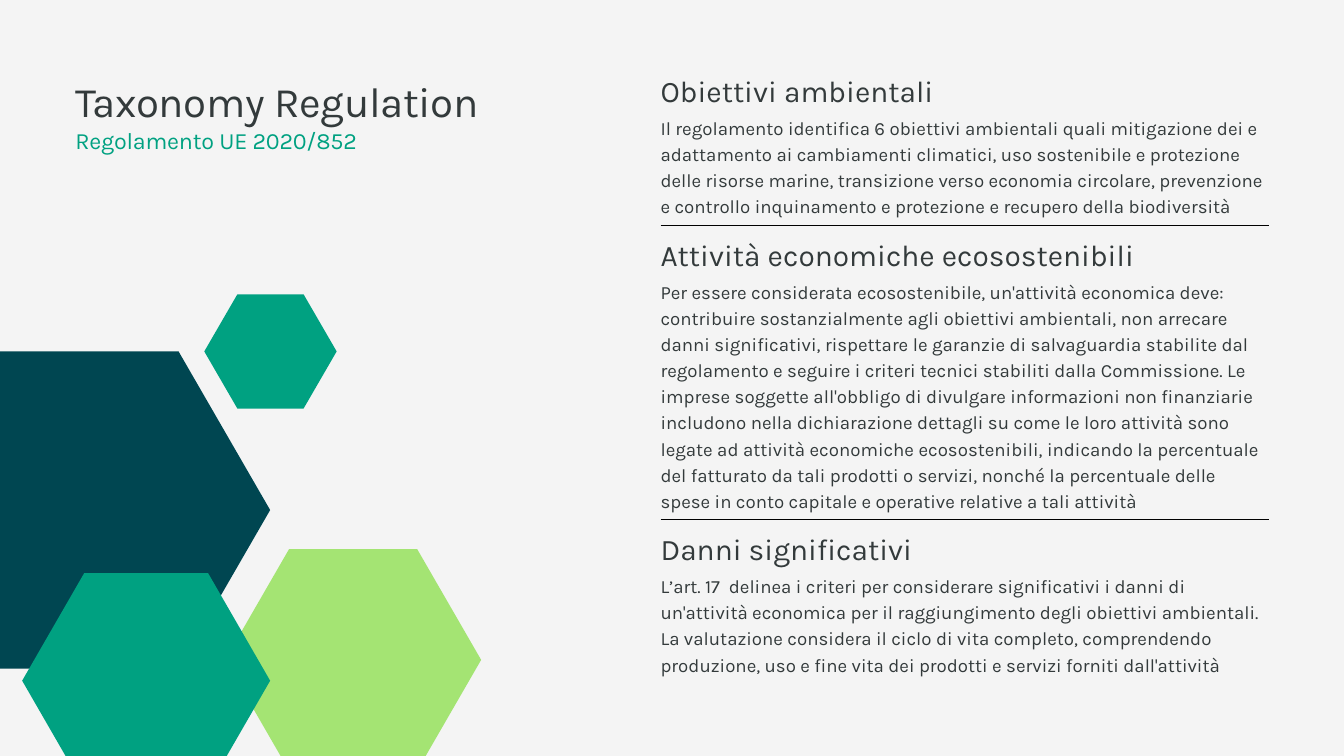
"""Build the Taxonomy Regulation slide: hexagon cluster on the left, three ruled sections on the right."""
from lxml.etree import SubElement
from pptx import Presentation
from pptx.dml.color import RGBColor
from pptx.enum.shapes import MSO_CONNECTOR as Connector
from pptx.enum.text import MSO_ANCHOR as Anchor, MSO_AUTO_SIZE as AutoSize, PP_ALIGN as Align
from pptx.oxml.ns import qn
from pptx.util import Inches, Pt

PAPER = RGBColor(0xF4, 0xF4, 0xF4)
INK = RGBColor(0x33, 0x3A, 0x3B)
BLACK = RGBColor(0, 0, 0)
GREEN = RGBColor(0x00, 0xA1, 0x81)
PETROL = RGBColor(0x00, 0x46, 0x51)
LIME = RGBColor(0xA4, 0xE4, 0x73)
FONT = "Karla"

TITLE = "Taxonomy Regulation"
SUBTITLE = "Regolamento UE 2020/852"

# (left, top, width, height, colour)
HEXAGONS = [
    (-1.43, 5.23, 5.45, 4.72, PETROL),
    (3.35, 8.17, 3.81, 3.3, LIME),
    (3.04, 4.38, 1.97, 1.7, GREEN),
    (0.33, 8.53, 3.69, 3.2, GREEN),
]

# (top, body height, heading, body)
SECTIONS = [
    (1.08, 1.55, "Obiettivi ambientali",
     "Il regolamento identifica 6 obiettivi ambientali quali mitigazione dei e adattamento ai "
     "cambiamenti climatici, uso sostenibile e protezione delle risorse marine, transizione verso "
     "economia circolare, prevenzione e controllo inquinamento e protezione e recupero della "
     "biodiversità"),
    (3.52, 3.45, "Attività economiche ecosostenibili",
     "Per essere considerata ecosostenibile, un'attività economica deve: contribuire "
     "sostanzialmente agli obiettivi ambientali, non arrecare danni significativi, rispettare le "
     "garanzie di salvaguardia stabilite dal regolamento e seguire i criteri tecnici stabiliti "
     "dalla Commissione. Le imprese soggette all'obbligo di divulgare informazioni non finanziarie "
     "includono nella dichiarazione dettagli su come le loro attività sono legate ad attività "
     "economiche ecosostenibili, indicando la percentuale del fatturato da tali prodotti o servizi, "
     "nonché la percentuale delle spese in conto capitale e operative relative a tali attività"),
    (7.9, 1.54, "Danni significativi",
     "L’art. 17  delinea i criteri per considerare significativi i danni di un'attività economica "
     "per il raggiungimento degli obiettivi ambientali. La valutazione considera il ciclo di vita "
     "completo, comprendendo produzione, uso e fine vita dei prodotti e servizi forniti "
     "dall'attività"),
]
COLUMN_LEFT, COLUMN_WIDTH = 9.83, 9.05
HEADING_HEIGHT, BODY_OFFSET, RULE_GAP = 0.54, 0.6, 0.17


def place(box, left, top, width, height):
    box.left, box.top, box.width, box.height = map(Inches, (left, top, width, height))
    frame = box.text_frame
    frame.word_wrap = True
    frame.auto_size = AutoSize.NONE
    frame.vertical_anchor = Anchor.TOP
    frame.margin_left = frame.margin_right = frame.margin_top = frame.margin_bottom = 0
    return frame


def write(para, text, *, size, leading, color=INK, tracking=0):
    para.alignment = Align.LEFT
    para.line_spacing = Pt(leading)
    para.space_before = para.space_after = Pt(0)
    span = para.add_run()
    span.text = text
    span.font.name = FONT
    span.font.size = Pt(size)
    span.font.color.rgb = color
    if tracking:
        span._r.get_or_add_rPr().set("spc", str(round(tracking * 100)))


def add_title(page):
    frame = place(page.shapes.title, 1.12, 1.12, 7.82, 1.16)
    write(frame.paragraphs[0], TITLE, size=45, leading=54, tracking=-0.4)
    write(frame.add_paragraph(), SUBTITLE, size=25, leading=30, color=GREEN, tracking=-0.2)


def add_hexagon(page, left, top, width, height, color):
    corners = [(0, 0.5), (0.25, 0), (0.75, 0), (1, 0.5), (0.75, 1), (0.25, 1)]
    points = [(Inches(left + x * width), Inches(top + y * height)) for x, y in corners]
    builder = page.shapes.build_freeform(*points[0])
    builder.add_line_segments(points[1:], close=True)
    hexagon = builder.convert_to_shape()
    hexagon.shadow.inherit = False
    hexagon.fill.solid()
    hexagon.fill.fore_color.rgb = color
    hexagon.line.fill.background()


def add_text(page, text, top, height, **style):
    box = page.shapes.add_textbox(0, 0, 0, 0)
    frame = place(box, COLUMN_LEFT, top, COLUMN_WIDTH, height)
    write(frame.paragraphs[0], text, **style)


def add_rule(page, y):
    rule = page.shapes.add_connector(
        Connector.STRAIGHT, Inches(COLUMN_LEFT), Inches(y),
        Inches(COLUMN_LEFT + COLUMN_WIDTH), Inches(y))
    rule.line.color.rgb = BLACK
    rule.line.width = Pt(0.75)
    SubElement(rule._element.spPr, qn("a:effectLst"))


def main():
    deck = Presentation()
    deck.slide_width, deck.slide_height = Inches(20), Inches(11.25)
    page = deck.slides.add_slide(deck.slide_layouts[5])
    page.background.fill.solid()
    page.background.fill.fore_color.rgb = PAPER

    add_title(page)
    for hexagon in HEXAGONS:
        add_hexagon(page, *hexagon)
    for index, (top, body_height, heading, body) in enumerate(SECTIONS):
        if index:
            add_rule(page, top - RULE_GAP)
        add_text(page, heading, top, HEADING_HEIGHT, size=32, leading=38.4)
        add_text(page, body, top + BODY_OFFSET, body_height, size=20, leading=28)
    deck.save("out.pptx")


if __name__ == "__main__":
    main()
